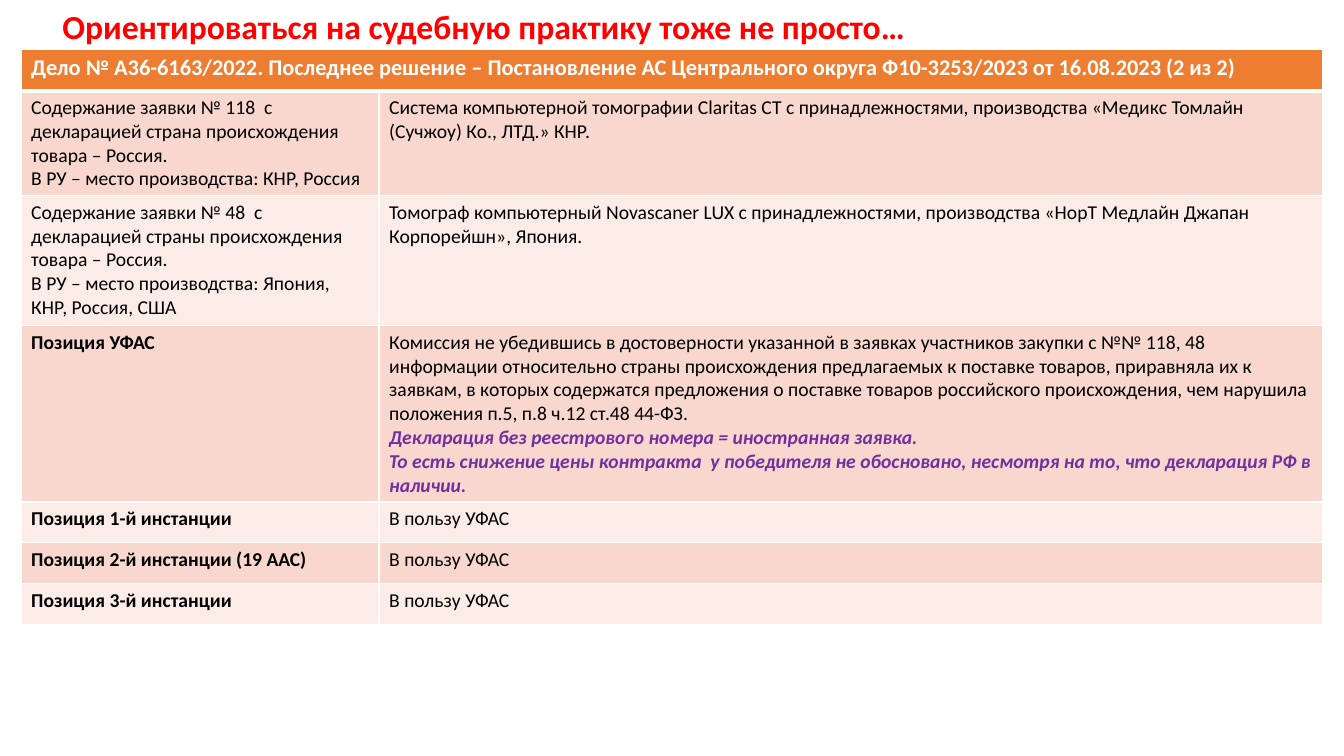
"""Build a slide with a table summarising a court case."""
from dataclasses import dataclass

from lxml import etree
from pptx import Presentation
from pptx.dml.color import RGBColor
from pptx.enum.text import MSO_ANCHOR
from pptx.oxml.ns import qn
from pptx.util import Inches, Pt

MIDDLE = MSO_ANCHOR.MIDDLE
FONT = "Calibri"
WHITE, BLACK, RED, PURPLE = "FFFFFF", "000000", "FF0000", "7030A0"
HEADER_FILL = "ED7D31"
BAND_FILLS = ("F8D7CE", "FCECE8")
COLUMN_WIDTHS = (3.55, 9.36)
HEADER_HEIGHT = 0.41
THIN, THICK = 1, 3


@dataclass(frozen=True)
class Line:
    text: str
    size: int = 14
    color: str = BLACK
    bold: bool = False
    italic: bool = False


@dataclass(frozen=True)
class CaseRow:
    height: float
    topic: tuple[Line, ...]
    details: tuple[Line, ...]


def conclusion(text: str) -> Line:
    return Line(text, color=PURPLE, bold=True, italic=True)


def ruling(court: str) -> CaseRow:
    return CaseRow(0.405, (Line(court, bold=True),), (Line("В пользу УФАС"),))


TITLE = Line("Ориентироваться на судебную практику тоже не просто…", 24, RED, True)
HEADER = Line(
    "Дело № А36-6163/2022. Последнее решение – Постановление АС Центрального округа "
    "Ф10-3253/2023 от 16.08.2023 (2 из 2)", 16, WHITE, True)
CASE_ROWS = (
    CaseRow(
        1.04,
        (Line("Содержание заявки № 118  с декларацией страна происхождения товара – Россия."),
         Line("В РУ – место производства: КНР, Россия")),
        (Line("Система компьютерной томографии Claritas CT с принадлежностями, производства "
              "«Медикс Томлайн (Сучжоу) Ко., ЛТД.» КНР."),)),
    CaseRow(
        1.29,
        (Line("Содержание заявки № 48  с декларацией страны происхождения товара – Россия."),
         Line("В РУ – место производства: Япония, КНР, Россия, США")),
        (Line("Томограф компьютерный Novascaner LUX с принадлежностями, производства "
              "«НорТ Медлайн Джапан Корпорейшн», Япония."),)),
    CaseRow(
        1.75,
        (Line("Позиция УФАС", bold=True),),
        (Line("Комиссия не убедившись в достоверности указанной в заявках участников закупки "
              "с №№ 118, 48 информации относительно страны происхождения предлагаемых к поставке "
              "товаров, приравняла их к заявкам, в которых содержатся предложения о поставке "
              "товаров российского происхождения, чем нарушила положения п.5, п.8 ч.12 ст.48 44-ФЗ."),
         conclusion("Декларация без реестрового номера = иностранная заявка."),
         conclusion("То есть снижение цены контракта  у победителя не обосновано, несмотря на то, "
                    "что декларация РФ в наличии."))),
    ruling("Позиция 1-й инстанции"),
    ruling("Позиция 2-й инстанции (19 ААС)"),
    ruling("Позиция 3-й инстанции"),
)


def rgb(color: str) -> RGBColor:
    return RGBColor.from_string(color)


def write_lines(text_frame, lines: tuple[Line, ...]) -> None:
    text_frame.text = "\n".join(line.text for line in lines)
    for paragraph, line in zip(text_frame.paragraphs, lines):
        font = paragraph.runs[0].font
        font.name, font.size = FONT, Pt(line.size)
        font.bold, font.italic = line.bold, line.italic
        font.color.rgb = rgb(line.color)


def set_borders(cell, top: int, bottom: int) -> None:
    properties = cell._tc.get_or_add_tcPr()
    widths = {"a:lnL": THIN, "a:lnR": THIN, "a:lnT": top, "a:lnB": bottom}
    for position, (side, width) in enumerate(widths.items()):
        border = etree.Element(qn(side), w=str(Pt(width)))
        fill = etree.SubElement(border, qn("a:solidFill"))
        etree.SubElement(fill, qn("a:srgbClr"), val=WHITE)
        properties.insert(position, border)


def fill_cell(cell, lines: tuple[Line, ...], color: str, top: int = THIN, bottom: int = THIN) -> None:
    write_lines(cell.text_frame, lines)
    cell.fill.solid()
    cell.fill.fore_color.rgb = rgb(color)
    set_borders(cell, top, bottom)


def add_title(slide) -> None:
    title = slide.shapes.add_textbox(Inches(0.52), 0, Inches(11.5), Inches(0.57))
    frame = title.text_frame
    frame.word_wrap = True
    frame.vertical_anchor = MIDDLE
    write_lines(frame, (TITLE,))
    frame.paragraphs[0].line_spacing = 0.9


def add_case_table(slide) -> None:
    heights = (HEADER_HEIGHT, *(row.height for row in CASE_ROWS))
    table = slide.shapes.add_table(
        len(heights), len(COLUMN_WIDTHS), Inches(0.21), Inches(0.49),
        Inches(sum(COLUMN_WIDTHS)), Inches(sum(heights))).table
    table.horz_banding = False
    for column, width in zip(table.columns, COLUMN_WIDTHS):
        column.width = Inches(width)
    for table_row, height in zip(table.rows, heights):
        table_row.height = Inches(height)

    table.cell(0, 0).merge(table.cell(0, 1))
    fill_cell(table.cell(0, 0), (HEADER,), HEADER_FILL, bottom=THICK)
    set_borders(table.cell(0, 1), THIN, THICK)
    for index, row in enumerate(CASE_ROWS):
        band = BAND_FILLS[index % len(BAND_FILLS)]
        top = THIN if index else THICK
        for column, lines in enumerate((row.topic, row.details)):
            fill_cell(table.cell(index + 1, column), lines, band, top)


def main() -> None:
    presentation = Presentation()
    presentation.slide_width, presentation.slide_height = Inches(13.33), Inches(7.5)
    slide = presentation.slides.add_slide(presentation.slide_layouts[6])
    add_title(slide)
    add_case_table(slide)
    presentation.save("out.pptx")


if __name__ == "__main__":
    main()
